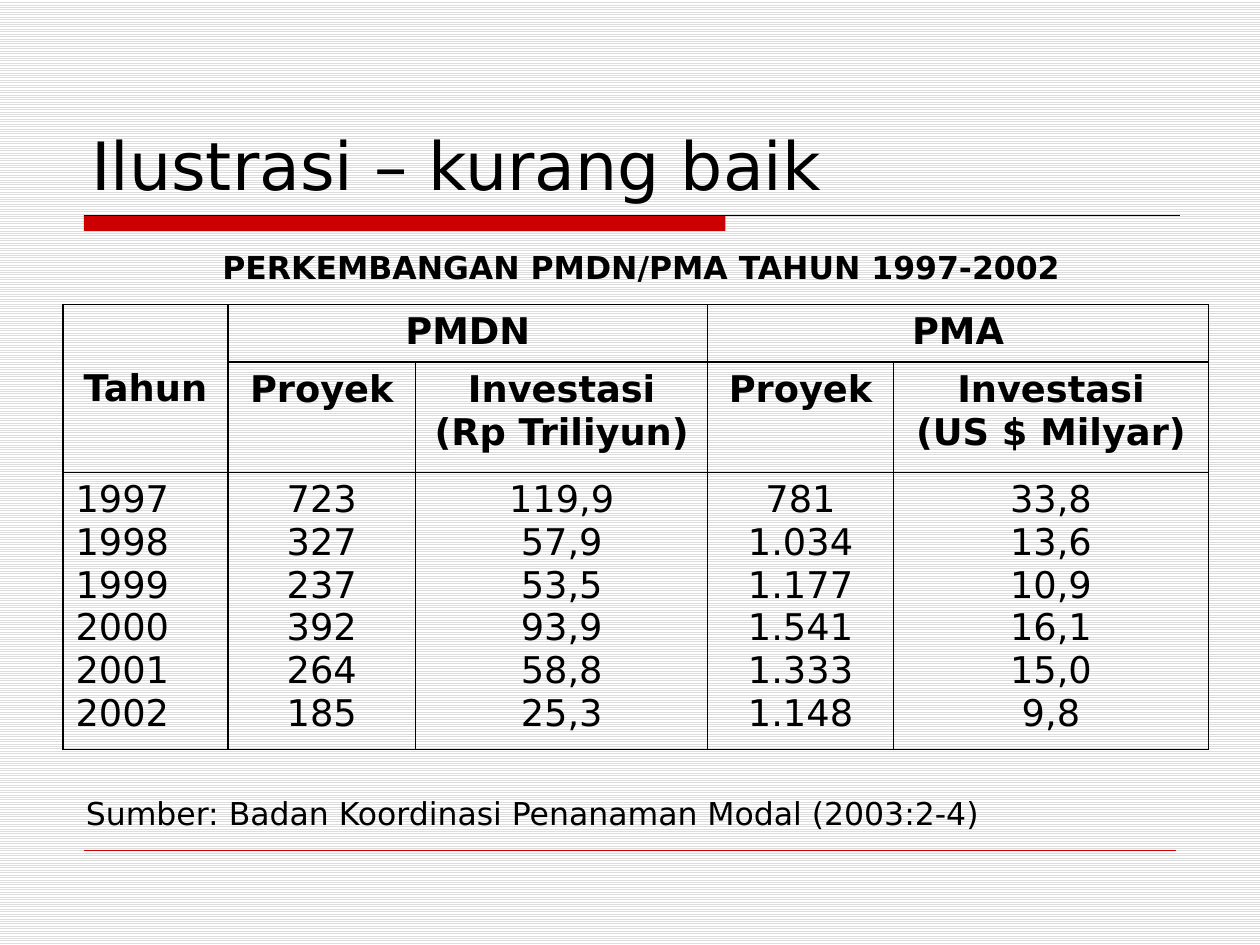
import pptx
import pptx.util
import pptx.dml.color
import pptx.enum.dml
import pptx.enum.shapes
import pptx.enum.text
import pptx.oxml.ns
import lxml.etree

COLORS = {"ink": "000000", "accent": "CC0000", "paper": "FFFFFF", "stripe": "DDDDDD"}
FONT = "DejaVu Sans"
ALIGN = pptx.enum.text.PP_ALIGN
ANCHOR = pptx.enum.text.MSO_ANCHOR

# Table content: the last row holds one column of figures per cell
COLUMN_WIDTHS = [15.7, 17.9, 27.8, 17.7, 30]
ROW_HEIGHTS = [5.5, 10.5, 26.4]
GROUPS = ["Tahun", "PMDN", "", "PMA", ""]
MEASURES = ["", "Proyek", "Investasi\n(Rp Triliyun)", "Proyek", "Investasi\n(US $ Milyar)"]
FIGURES = [
    ["1997", "723", "119,9", "781", "33,8"],
    ["1998", "327", "57,9", "1.034", "13,6"],
    ["1999", "237", "53,5", "1.177", "10,9"],
    ["2000", "392", "93,9", "1.541", "16,1"],
    ["2001", "264", "58,8", "1.333", "15,0"],
    ["2002", "185", "25,3", "1.148", "9,8"],
]


def grid(units):
    """Length on a grid of 120 columns by 90 rows, twelve to the inch."""
    return pptx.util.Inches(units / 12)


def rgb(name):
    return pptx.dml.color.RGBColor.from_string(COLORS[name])


def write(frame, text, size=18, bold=False, align=ALIGN.LEFT, anchor=ANCHOR.TOP):
    frame.word_wrap = True
    frame.vertical_anchor = anchor
    for index, line in enumerate(text.split("\n")):
        paragraph = frame.paragraphs[0] if index == 0 else frame.add_paragraph()
        paragraph.alignment = align
        run = paragraph.add_run()
        run.text = line
        run.font.name = FONT
        run.font.size = pptx.util.Pt(size)
        run.font.bold = bold
        run.font.color.rgb = rgb("ink")


def add_text(slide, left, top, width, height, text, **style):
    box = slide.shapes.add_textbox(grid(left), grid(top), grid(width), grid(height))
    write(box.text_frame, text, **style)


def add_rule(slide, left, right, top, color, weight):
    rule = slide.shapes.add_connector(
        pptx.enum.shapes.MSO_CONNECTOR.STRAIGHT,
        grid(left), grid(top), grid(right), grid(top))
    rule.line.color.rgb = rgb(color)
    rule.line.width = pptx.util.Pt(weight)
    lxml.etree.SubElement(rule._element.spPr, pptx.oxml.ns.qn("a:effectLst"))


def add_bar(slide, left, top, width, height):
    bar = slide.shapes.add_shape(
        pptx.enum.shapes.MSO_SHAPE.RECTANGLE,
        grid(left), grid(top), grid(width), grid(height))
    bar.shadow.inherit = False
    bar.fill.solid()
    bar.fill.fore_color.rgb = rgb("accent")
    bar.line.fill.background()


def border_cell(cell):
    qn = pptx.oxml.ns.qn
    properties = cell._tc.get_or_add_tcPr()
    for position, side in enumerate(("a:lnL", "a:lnR", "a:lnT", "a:lnB")):
        edge = lxml.etree.Element(qn(side), w=str(pptx.util.Pt(1)))
        fill = lxml.etree.SubElement(edge, qn("a:solidFill"))
        lxml.etree.SubElement(fill, qn("a:srgbClr"), val=COLORS["ink"])
        properties.insert(position, edge)


def add_investment_table(slide, left, top):
    table = slide.shapes.add_table(
        len(ROW_HEIGHTS), len(COLUMN_WIDTHS), grid(left), grid(top),
        grid(sum(COLUMN_WIDTHS)), grid(sum(ROW_HEIGHTS))).table
    table.first_row = table.horz_banding = False
    for column, width in zip(table.columns, COLUMN_WIDTHS):
        column.width = grid(width)
    for row, height in zip(table.rows, ROW_HEIGHTS):
        row.height = grid(height)

    # Year spans both header rows; each investment group spans two columns
    table.cell(0, 0).merge(table.cell(1, 0))
    for first in (1, 3):
        table.cell(0, first).merge(table.cell(0, first + 1))

    figure_columns = ["\n".join(values) for values in zip(*FIGURES)]
    for r, texts in enumerate([GROUPS, MEASURES, figure_columns]):
        for c, text in enumerate(texts):
            cell = table.cell(r, c)
            cell.fill.background()
            border_cell(cell)
            if text:
                is_header = r < 2
                write(cell.text_frame, text, size=21, bold=is_header,
                      align=ALIGN.CENTER if is_header or c else ALIGN.LEFT)
    table.cell(0, 0).vertical_anchor = ANCHOR.MIDDLE


def paint_background(slide):
    fill = slide.background.fill
    fill.patterned()
    fill.pattern = pptx.enum.dml.MSO_PATTERN.LIGHT_HORIZONTAL
    fill.fore_color.rgb = rgb("stripe")
    fill.back_color.rgb = rgb("paper")


def main():
    deck = pptx.Presentation()
    deck.slide_width, deck.slide_height = grid(120), grid(90)
    slide = deck.slides.add_slide(deck.slide_layouts[6])
    paint_background(slide)

    # Title with its bar and rule, and the footer rule
    add_bar(slide, 8, 20.5, 61.1, 1.5)
    add_rule(slide, 8, 112.4, 20.5, "ink", 0.75)
    add_rule(slide, 8, 112, 81, "accent", 0.25)
    add_text(slide, 7.5, 4, 105, 16, "Ilustrasi – kurang baik",
             size=38, anchor=ANCHOR.BOTTOM)

    # Table with its heading and source
    add_text(slide, 20, 23, 87, 4.8, "PERKEMBANGAN PMDN/PMA TAHUN 1997-2002", bold=True)
    add_investment_table(slide, 6, 29)
    add_text(slide, 7, 75, 107, 4.8, "Sumber: Badan Koordinasi Penanaman Modal (2003:2-4)")

    deck.save("out.pptx")


if __name__ == "__main__":
    main()
